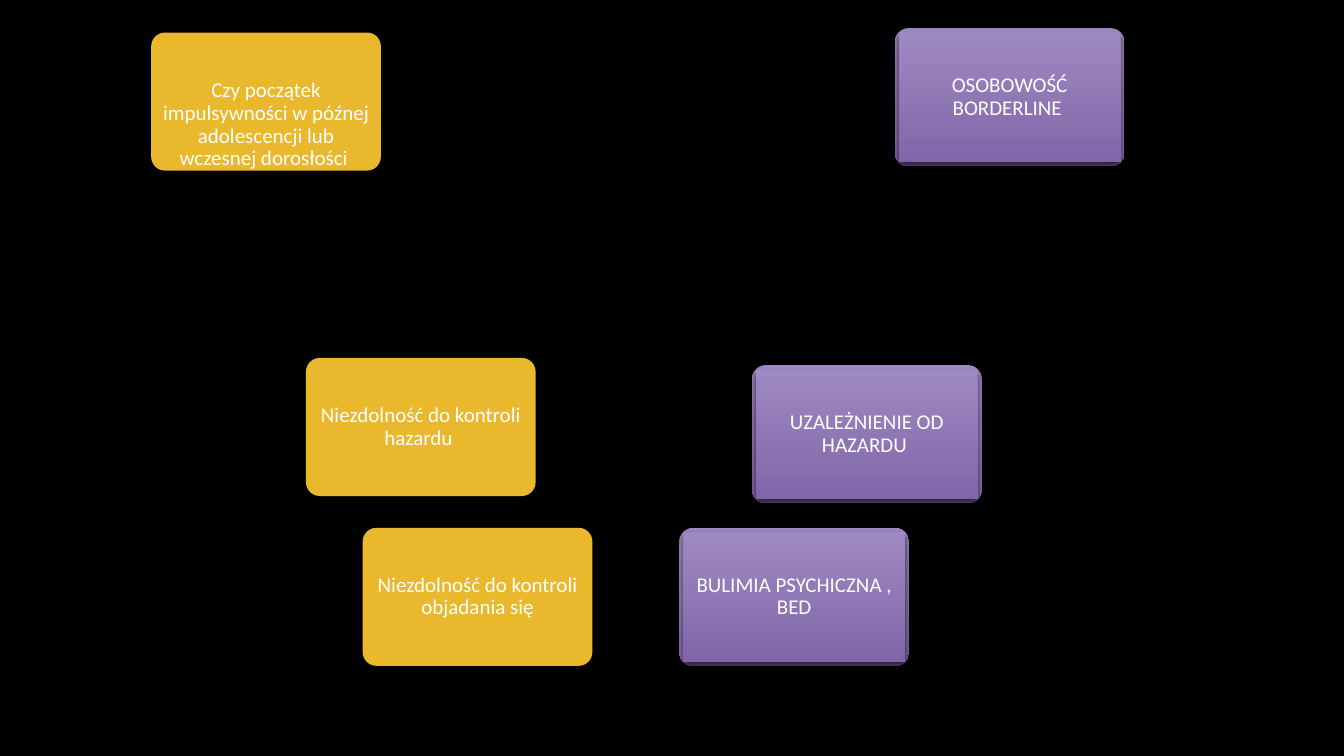
from lxml import etree
from pptx import Presentation
from pptx.dml.color import RGBColor
from pptx.enum.shapes import MSO_SHAPE
from pptx.enum.text import MSO_ANCHOR, PP_ALIGN
from pptx.oxml.ns import qn
from pptx.util import Cm, Pt

ROUNDED, RECTANGLE = MSO_SHAPE.ROUNDED_RECTANGLE, MSO_SHAPE.RECTANGLE
MIDDLE, CENTER = MSO_ANCHOR.MIDDLE, PP_ALIGN.CENTER
BLACK = RGBColor(0x00, 0x00, 0x00)
WHITE = RGBColor(0xFF, 0xFF, 0xFF)
YELLOW = RGBColor(0xE9, 0xB8, 0x2D)
LILAC = RGBColor(0x9F, 0x89, 0xC2)
VIOLET = RGBColor(0x80, 0x66, 0xA8)

SYMPTOMS = [
    ("Czy początek impulsywności w późnej adolescencji lub wczesnej dorosłości ", 3.81, 0.82, 0.69),
    ("Niezdolność do kontroli hazardu ", 7.71, 9.02, 0.1),
    ("Niezdolność do kontroli objadania się", 9.14, 13.3, 0.1),
]
DIAGNOSES = [
    ("OSOBOWOŚĆ BORDERLINE ", 22.55, 0.71, 0.1),
    ("UZALEŻNIENIE OD HAZARDU ", 18.95, 9.2, 0.1),
    ("BULIMIA PSYCHICZNA , BED", 17.12, 13.3, 0.1),
]
CARD_WIDTH, CARD_HEIGHT, MARGIN = 5.79, 3.48, 0.1
FRAME_FORMAT = {
    "word_wrap": True, "vertical_anchor": MIDDLE,
    "margin_left": Cm(0.15), "margin_right": Cm(0.15),
    "margin_top": Cm(0.15), "margin_bottom": Cm(0.15),
}
PARA_FORMAT = {"alignment": CENTER, "line_spacing": 0.9}
FONT_FORMAT = {"name": "Calibri", "size": Pt(15)}


def apply_format(target, values):
    """Set every attribute named in values on the target."""
    for name, value in values.items():
        setattr(target, name, value)


def add_box(page, kind, left, top, width, height):
    """Add a shape without line or shadow."""
    box = page.shapes.add_shape(kind, Cm(left), Cm(top), Cm(width), Cm(height))
    box.shadow.inherit = False
    box.line.fill.background()
    return box


def shade_violet(box):
    """Give a box the violet gradient and a soft shadow below it."""
    box.fill.gradient()
    box.fill.gradient_angle = 270
    for stop, color in zip(box.fill.gradient_stops, (LILAC, VIOLET)):
        stop.color.rgb = color
    effects = box._element.spPr.find(qn("a:effectLst"))
    shadow = etree.SubElement(effects, qn("a:outerShdw"), blurRad=str(Pt(5)),
                              dist=str(Pt(3)), dir="5400000", rotWithShape="0")
    color = etree.SubElement(shadow, qn("a:srgbClr"), val=str(BLACK))
    etree.SubElement(color, qn("a:alpha"), val="65000")


def add_card(page, text, left, top, label_drop, is_diagnosis):
    """Add a rounded card with its text panel."""
    card = add_box(page, ROUNDED, left, top, CARD_WIDTH, CARD_HEIGHT)
    card.adjustments[0] = 0.1
    label = add_box(page, RECTANGLE, left + MARGIN, top + label_drop,
                    CARD_WIDTH - 2 * MARGIN, CARD_HEIGHT - 2 * MARGIN)
    if is_diagnosis:
        shade_violet(card)
        shade_violet(label)
    else:
        card.fill.solid()
        card.fill.fore_color.rgb = YELLOW
        label.fill.background()
    apply_format(label.text_frame, FRAME_FORMAT)
    para = label.text_frame.paragraphs[0]
    apply_format(para, PARA_FORMAT)
    span = para.add_run()
    span.text = text
    apply_format(span.font, FONT_FORMAT)
    span.font.color.rgb = WHITE


def main():
    """Build the slide and save the deck."""
    deck = Presentation()
    deck.slide_width, deck.slide_height = Cm(33.87), Cm(19.05)
    page = deck.slides.add_slide(deck.slide_layouts[6])
    page.background.fill.solid()
    page.background.fill.fore_color.rgb = BLACK
    for cards, is_diagnosis in ((SYMPTOMS, False), (DIAGNOSES, True)):
        for card in cards:
            add_card(page, *card, is_diagnosis)
    deck.save("out.pptx")


if __name__ == "__main__":
    main()
